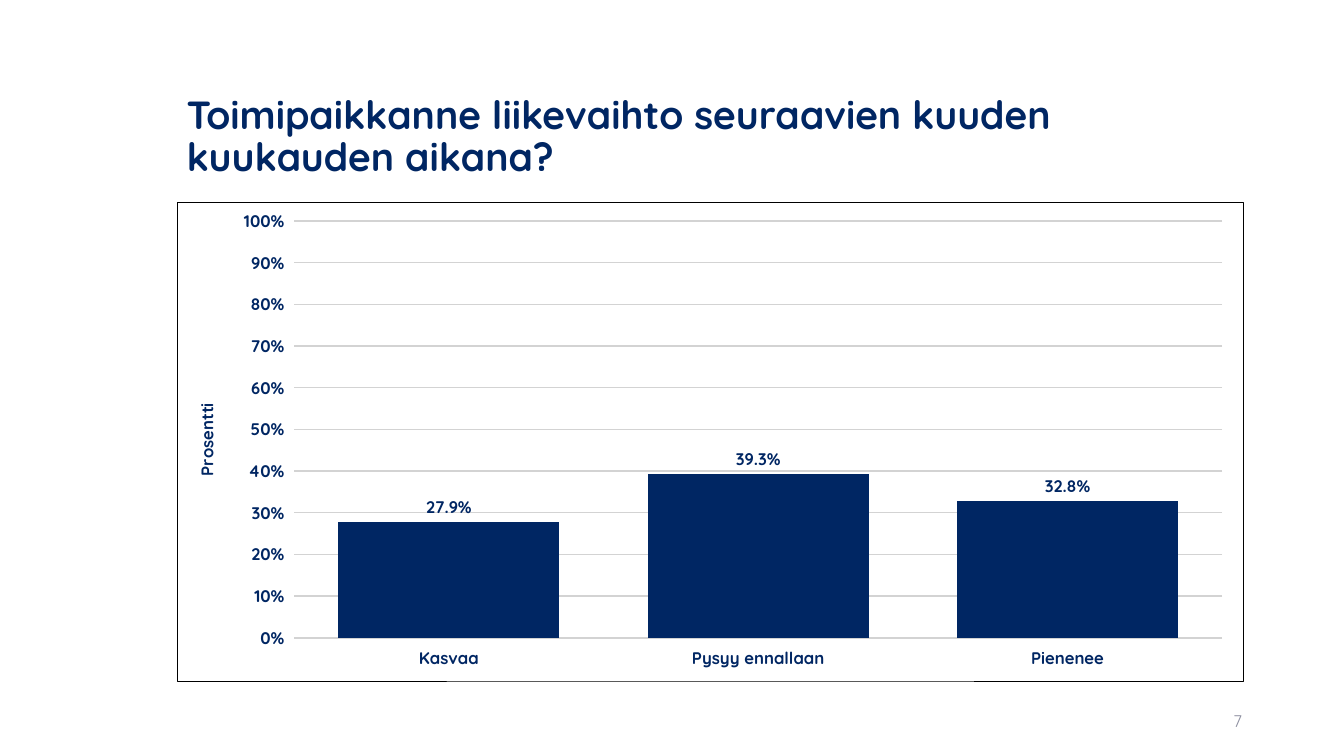
from lxml import etree
from pptx import Presentation
from pptx.chart.data import CategoryChartData
from pptx.dml.color import RGBColor
from pptx.enum.chart import XL_CHART_TYPE, XL_LABEL_POSITION, XL_TICK_MARK
from pptx.enum.text import MSO_ANCHOR, PP_ALIGN
from pptx.oxml import parse_xml
from pptx.oxml.ns import nsdecls, qn
from pptx.util import Cm, Pt

NAVY = RGBColor(0x00, 0x26, 0x63)
GREY = RGBColor(0x8C, 0x8E, 0x9F)
GRID = RGBColor(0xD3, 0xD3, 0xD3)
WHITE = RGBColor(0xFF, 0xFF, 0xFF)
FONT = "Quicksand"

TITLE_FORMAT = {"name": FONT, "size": Pt(28), "bold": True}
CHART_FORMAT = {"name": FONT, "size": Pt(12), "bold": True}
NUMBER_FORMAT = {"name": FONT, "size": Pt(12), "bold": False}

SHARES = {"Kasvaa": 0.279, "Pysyy ennallaan": 0.393, "Pienenee": 0.328}


def format_font(font, values, colour):
    for name, value in values.items():
        setattr(font, name, value)
    font.color.rgb = colour


def place(shape, left, top, width, height):
    for name, value in zip(("left", "top", "width", "height"), (left, top, width, height)):
        setattr(shape, name, Cm(value))


def write_text(shape, text, values, colour, align):
    frame = shape.text_frame
    frame.word_wrap = True
    frame.vertical_anchor = MSO_ANCHOR.MIDDLE
    para = frame.paragraphs[0]
    para.alignment = align
    span = para.add_run()
    span.text = text
    format_font(span.font, values, colour)
    return para


def add_title(page, text):
    title = page.shapes.title
    place(title, 4.45, 1.63, 26.9, 3.68)
    para = write_text(title, text, TITLE_FORMAT, NAVY, PP_ALIGN.LEFT)
    para.line_spacing = 0.9


def add_page_number(page, number):
    box = page.shapes.add_textbox(Cm(23.93), Cm(17.65), Cm(7.62), Cm(1.02))
    write_text(box, number, NUMBER_FORMAT, GREY, PP_ALIGN.RIGHT)


def frame_chart(chart):
    """Draw the thin black border around the whole chart."""
    border = parse_xml(
        f'<c:spPr {nsdecls("c", "a")}><a:noFill/><a:ln w="6350"><a:solidFill>'
        '<a:srgbClr val="000000"/></a:solidFill></a:ln></c:spPr>'
    )
    chart.element.find(qn("c:chart")).addnext(border)


def set_plot_area(chart, **fractions):
    """Fix the inner plot area as fractions of the chart and fill it white."""
    area = chart.element.find(".//" + qn("c:plotArea"))
    for old in area.findall(qn("c:layout")):
        area.remove(old)
    layout = etree.Element(qn("c:layout"))
    manual = etree.SubElement(layout, qn("c:manualLayout"))
    settings = {"layoutTarget": "inner", "xMode": "edge", "yMode": "edge", **fractions}
    for name, value in settings.items():
        etree.SubElement(manual, qn(f"c:{name}")).set("val", str(value))
    area.insert(0, layout)
    area.append(parse_xml(
        f'<c:spPr {nsdecls("c", "a")}><a:solidFill><a:srgbClr val="{WHITE}"/>'
        '</a:solidFill></c:spPr>'
    ))


def format_axes(chart):
    for axis in (chart.category_axis, chart.value_axis):
        axis.major_tick_mark = XL_TICK_MARK.OUTSIDE
        axis.format.line.fill.background()
    axis = chart.value_axis
    scale = {"minimum_scale": 0, "maximum_scale": 1, "major_unit": 0.1}
    for name, value in scale.items():
        setattr(axis, name, value)
    axis.tick_labels.number_format = "0%"
    axis.tick_labels.number_format_is_linked = False
    gridline = axis.major_gridlines.format.line
    gridline.width = Pt(1)
    gridline.color.rgb = GRID
    para = axis.axis_title.text_frame.paragraphs[0]
    span = para.add_run()
    span.text = "Prosentti"
    format_font(span.font, CHART_FORMAT, NAVY)


def format_columns(plot):
    plot.gap_width = 40
    plot.overlap = -2
    plot.vary_by_categories = False
    fill = plot.series[0].format.fill
    fill.solid()
    fill.fore_color.rgb = NAVY
    labels = plot.series[0].data_labels
    settings = {
        "show_value": True,
        "number_format": "0.0%",
        "number_format_is_linked": False,
        "position": XL_LABEL_POSITION.OUTSIDE_END,
    }
    for name, value in settings.items():
        setattr(labels, name, value)
    format_font(labels.font, CHART_FORMAT, NAVY)


def add_share_chart(page, shares):
    data = CategoryChartData()
    data.categories = list(shares)
    data.add_series("Series 1", list(shares.values()))
    chart = page.shapes.add_chart(
        XL_CHART_TYPE.COLUMN_CLUSTERED, Cm(4.45), Cm(5.08), Cm(26.9), Cm(12.09), data
    ).chart
    chart.has_legend = False
    chart.has_title = False
    format_font(chart.font, CHART_FORMAT, NAVY)
    format_axes(chart)
    format_columns(chart.plots[0])
    set_plot_area(chart, x=0.11, y=0.04, w=0.87, h=0.87)
    frame_chart(chart)


def main():
    deck = Presentation()
    deck.slide_width, deck.slide_height = Cm(33.87), Cm(19.05)
    page = deck.slides.add_slide(deck.slide_layouts.get_by_name("Title Only"))
    add_title(page, "Toimipaikkanne liikevaihto seuraavien kuuden kuukauden aikana?")
    add_page_number(page, "7")
    add_share_chart(page, SHARES)
    deck.save("out.pptx")


if __name__ == "__main__":
    main()
